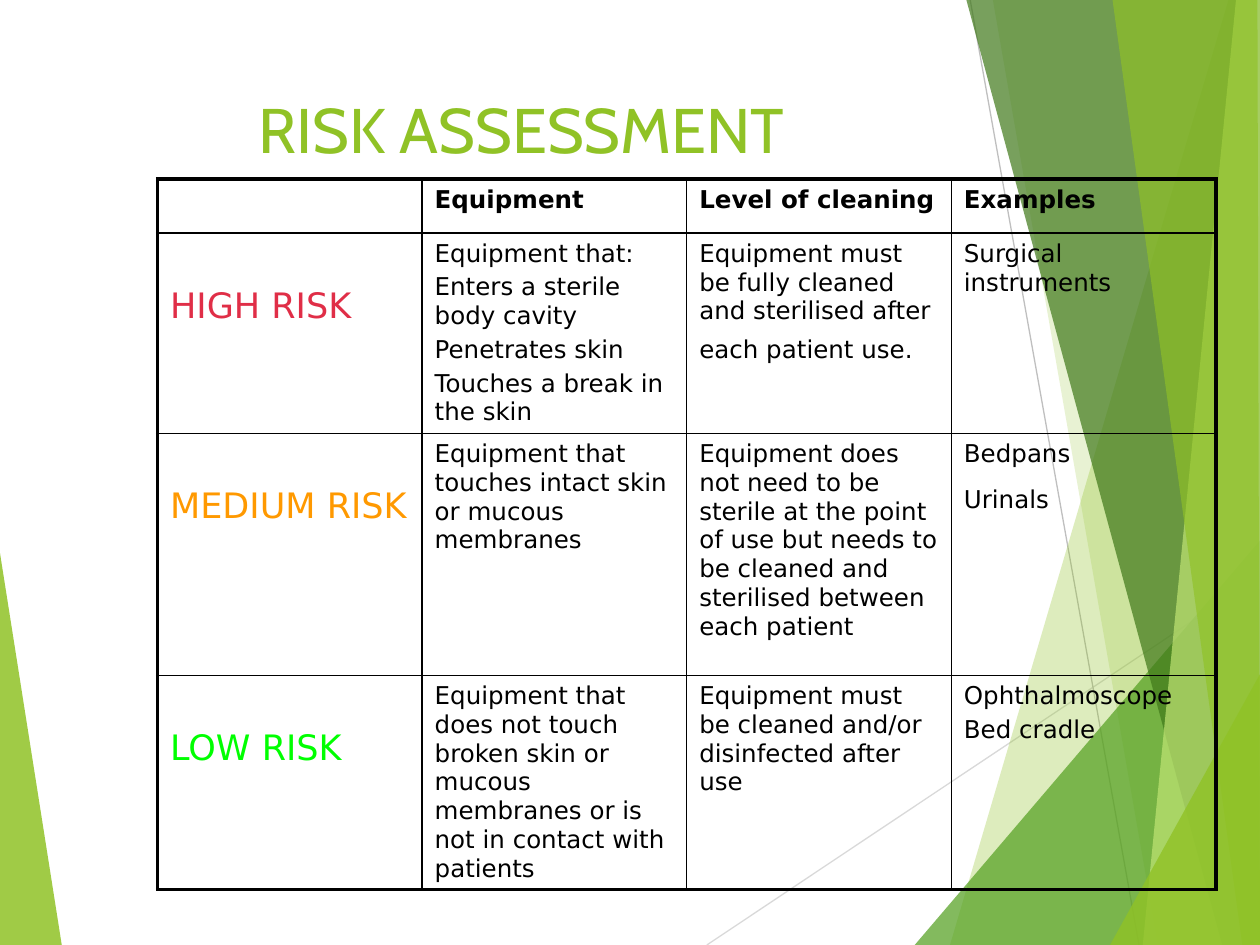
"""Build the risk assessment slide: a table over a green faceted backdrop."""
from lxml import etree
from pptx import Presentation
from pptx import util as u
from pptx.dml.color import RGBColor
from pptx.enum import shapes, text
from pptx.oxml.ns import qn

GREEN = RGBColor(0x90, 0xC2, 0x26)
MID_GREEN = RGBColor(0x54, 0xA0, 0x21)
DARK_GREEN = RGBColor(0x3F, 0x78, 0x19)
PALE_GREEN = RGBColor(0xC0, 0xE4, 0x74)
LIGHT_GREY = RGBColor(0xD9, 0xD9, 0xD9)
GREY = RGBColor(0xBF, 0xBF, 0xBF)
BLACK = RGBColor(0, 0, 0)
RED = RGBColor(0xE0, 0x2E, 0x47)
ORANGE = RGBColor(0xFF, 0x99, 0x00)
LIME = RGBColor(0, 0xFF, 0)

TITLE = "RISK ASSESSMENT"
HEADINGS = ["", "Equipment", "Level of cleaning", "Examples"]
RISKS = [
    ("HIGH RISK", RED,
     ["Equipment that:", "Enters a sterile body cavity", "Penetrates skin",
      "Touches a break in the skin"],
     ["Equipment must be fully cleaned and sterilised after each patient use. "],
     ["Surgical instruments"]),
    ("MEDIUM RISK", ORANGE,
     ["Equipment that touches intact skin or mucous membranes"],
     ["Equipment does not need to be sterile at the point of use but needs to be "
      "cleaned and sterilised between each patient"],
     ["Bedpans", "Urinals "]),
    ("LOW RISK", LIME,
     ["Equipment that does not touch broken skin or mucous membranes or is not in "
      "contact with patients"],
     ["Equipment must be cleaned and/or disinfected after use"],
     ["Ophthalmoscope", "Bed cradle"]),
]

LEFT_FACET = ([(0, 4.39), (0.49, 7.5), (0, 7.5)], GREEN, 85)
RAYS = [((5.61, 7.5), (10, 4.57), LIGHT_GREY), ((7.7, 0), (9.04, 7.5), GREY)]
RIGHT_FACETS = [
    ([(9.75, 0), (7.54, 7.5), (10, 7.5), (10, 0)], GREEN, 30),
    ([(7.88, 0), (9.19, 7.5), (10, 7.5), (10, 0)], GREEN, 20),
    ([(7.26, 7.5), (10, 4.29), (10, 7.5)], MID_GREEN, 72),
    ([(7.67, 0), (9.7, 7.5), (10, 7.5), (10, 0)], DARK_GREEN, 70),
    ([(9.81, 0), (9.07, 7.5), (10, 7.5), (10, 0)], PALE_GREEN, 70),
    ([(8.83, 0), (9.86, 7.5), (10, 7.5), (9.98, 0)], GREEN, 65),
    ([(8.81, 7.5), (10, 5.35), (10, 7.5)], GREEN, 80),
]

TABLE_LEFT, TABLE_TOP, COLUMN_WIDTH = 1.25, 1.42, 2.1
ROW_HEIGHTS = [0.43, 1.59, 1.92, 1.7]
LABEL_TOP = 0.42
BODY_SIZE, LABEL_SIZE = 14, 20
OUTER, INNER = 2.25, 1


def write(frame, lines, size=BODY_SIZE, color=BLACK, font="DejaVu Sans", bold=False, align=None):
    """Fill a frame; a closing space is set at label size and opens up its line."""
    for index, line in enumerate(lines):
        paragraph = frame.paragraphs[0] if index == 0 else frame.add_paragraph()
        paragraph.alignment = align
        words = line.rstrip()
        pieces = [(words, size)]
        if words != line:
            pieces.append((" ", LABEL_SIZE))
        paragraph.space_before = u.Pt(0.2 * max(points for _, points in pieces))
        for piece, points in pieces:
            run = paragraph.add_run()
            run.text = piece
            run.font.size = u.Pt(points)
            run.font.name = font
            run.font.bold = bold
            run.font.color.rgb = color


def add_facet(slide, points, color, opacity):
    corners = [(u.Inches(x), u.Inches(y)) for x, y in points]
    builder = slide.shapes.build_freeform(*corners[0])
    builder.add_line_segments(corners[1:], close=True)
    facet = builder.convert_to_shape()
    facet.shadow.inherit = False
    facet.line.fill.background()
    facet.fill.solid()
    facet.fill.fore_color.rgb = color
    tint = facet.element.spPr.find(qn("a:solidFill"))[0]
    etree.SubElement(tint, qn("a:alpha"), val=str(opacity * 1000))


def add_ray(slide, start, end, color):
    ray = slide.shapes.add_connector(
        shapes.MSO_CONNECTOR.STRAIGHT, *(u.Inches(v) for v in start + end))
    ray.line.color.rgb = color
    ray.line.width = u.Pt(0.75)
    etree.SubElement(ray.element.spPr, qn("a:effectLst"))


def set_borders(cell, widths):
    properties = cell._tc.get_or_add_tcPr()
    for position, (side, points) in enumerate(widths.items()):
        border = etree.Element(qn("a:ln" + side), w=str(u.Pt(points)))
        fill = etree.SubElement(border, qn("a:solidFill"))
        etree.SubElement(fill, qn("a:srgbClr"), val=str(BLACK))
        properties.insert(position, border)


def add_risk_table(slide):
    rows, columns = len(ROW_HEIGHTS), len(HEADINGS)
    table = slide.shapes.add_table(
        rows, columns, u.Inches(TABLE_LEFT), u.Inches(TABLE_TOP),
        u.Inches(COLUMN_WIDTH * columns), u.Inches(sum(ROW_HEIGHTS))).table
    table.first_row = table.horz_banding = False
    for column in table.columns:
        column.width = u.Inches(COLUMN_WIDTH)
    for r, height in enumerate(ROW_HEIGHTS):
        table.rows[r].height = u.Inches(height)
        for c in range(columns):
            cell = table.cell(r, c)
            cell.fill.background()
            set_borders(cell, {
                "L": OUTER if c == 0 else INNER,
                "R": OUTER if c == columns - 1 else INNER,
                "T": OUTER if r == 0 else INNER,
                "B": OUTER if r == rows - 1 else INNER,
            })
    for c, heading in enumerate(HEADINGS):
        if heading:
            write(table.cell(0, c).text_frame, [heading], bold=True)
    for r, (label, color, *details) in enumerate(RISKS, start=1):
        label_cell = table.cell(r, 0)
        label_cell.margin_top = u.Inches(LABEL_TOP)
        write(label_cell.text_frame, [label], size=LABEL_SIZE, color=color)
        for c, lines in enumerate(details, start=1):
            write(table.cell(r, c).text_frame, lines)


def main():
    deck = Presentation()
    deck.slide_width, deck.slide_height = u.Inches(10), u.Inches(7.5)
    slide = deck.slides.add_slide(deck.slide_layouts[5])

    add_facet(slide, *LEFT_FACET)
    for ray in RAYS:
        add_ray(slide, *ray)
    for facet in RIGHT_FACETS:
        add_facet(slide, *facet)

    title = slide.shapes.title
    title.left, title.top = u.Inches(0.67), u.Inches(0.67)
    title.width, title.height = u.Inches(6.94), u.Inches(1.44)
    title.text_frame.vertical_anchor = text.MSO_ANCHOR.TOP
    title.text_frame.auto_size = text.MSO_AUTO_SIZE.NONE
    write(title.text_frame, [TITLE], size=36, color=GREEN, font="Cabin",
          align=text.PP_ALIGN.CENTER)

    add_risk_table(slide)
    deck.save("out.pptx")


if __name__ == "__main__":
    main()
